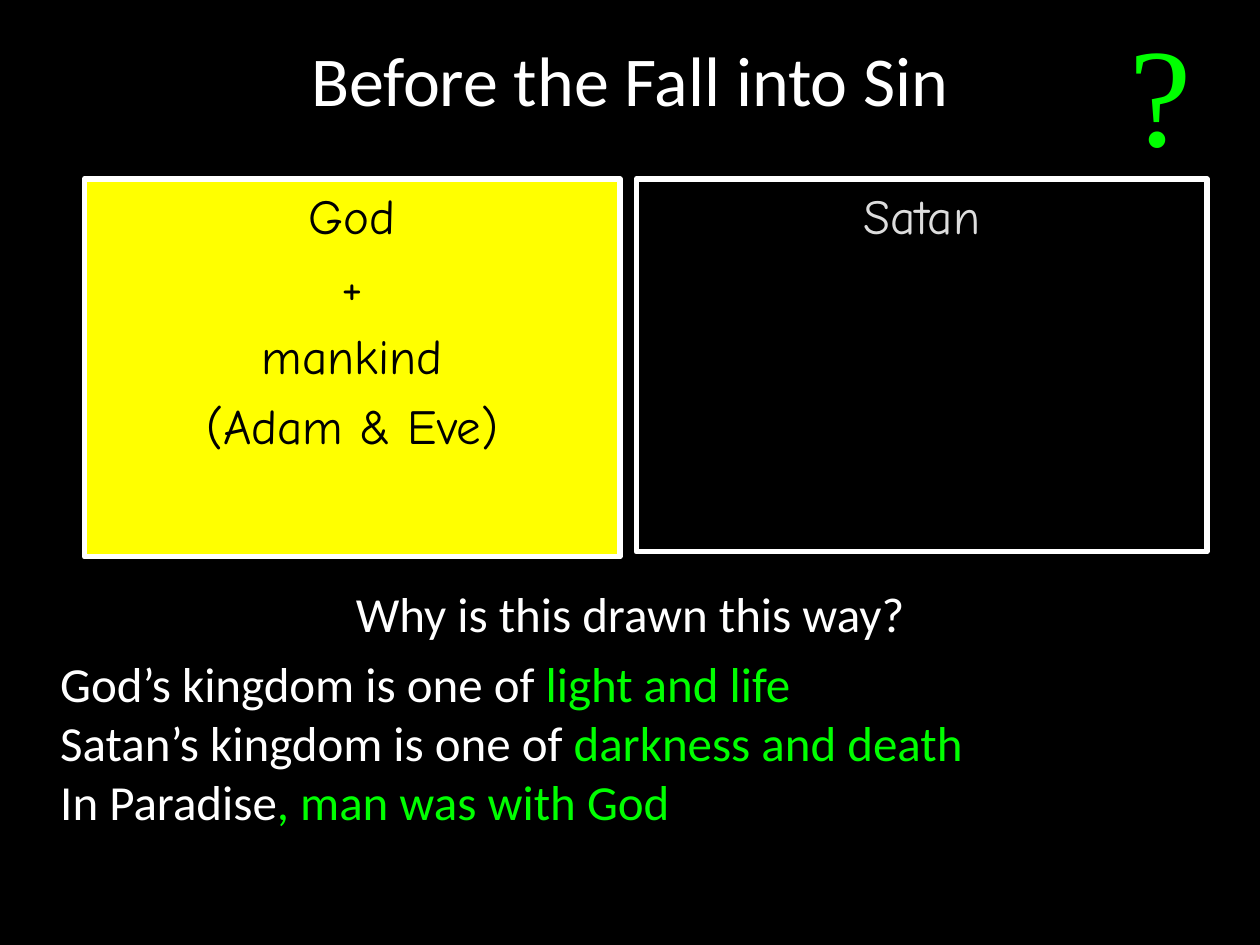
from pptx import Presentation
from pptx.dml.color import RGBColor
from pptx.enum.shapes import MSO_SHAPE
from pptx.enum.text import MSO_ANCHOR as Anchor, PP_ALIGN as Align
from pptx.util import Inches, Pt

COLORS = {
    "black": "000000",
    "white": "FFFFFF",
    "yellow": "FFFF00",
    "green": "00FF00",
    "gray": "DDDDDD",
}
TITLE = {"name": "Calibri", "size": Pt(40)}
BODY = {"name": "Calibri", "size": Pt(28)}
KINGDOM = {"name": "Comic Neue", "size": Pt(28)}
MARK = {"name": "Times New Roman", "size": Pt(80)}
SPACE_BEFORE = Pt(6.5)
ANSWERS = [
    ("God’s kingdom is one of ", "light and life"),
    ("Satan’s kingdom is one of ", "darkness and death"),
    ("In Paradise", ", man was with God"),
]


def color(name):
    """Return the named colour."""
    return RGBColor.from_string(COLORS[name])


def place(shape, box):
    """Set left, top, width and height in inches."""
    for key, value in zip(("left", "top", "width", "height"), box):
        setattr(shape, key, Inches(value))


def add_run(paragraph, text, font, color_name):
    """Append formatted text to a paragraph."""
    run = paragraph.add_run()
    run.text = text
    for key, value in font.items():
        setattr(run.font, key, value)
    run.font.color.rgb = color(color_name)


def write_lines(frame, lines, font, color_name, space=SPACE_BEFORE):
    """Write each line as a centred paragraph."""
    frame.word_wrap = True
    for index, line in enumerate(lines):
        paragraph = frame.add_paragraph() if index else frame.paragraphs[0]
        paragraph.alignment = Align.CENTER
        paragraph.space_before = space
        add_run(paragraph, line, font, color_name)


def set_title(slide, text):
    """Move and fill the title placeholder."""
    title = slide.shapes.title
    place(title, (0, 0, 10, 1.25))
    title.text_frame.vertical_anchor = Anchor.MIDDLE
    write_lines(title.text_frame, [text], TITLE, "white", Pt(0))


def add_text(slide, box, lines, font, color_name, space=SPACE_BEFORE):
    """Add a text box of centred lines and return its frame."""
    frame = slide.shapes.add_textbox(*map(Inches, box)).text_frame
    write_lines(frame, lines, font, color_name, space)
    return frame


def add_kingdom(slide, box, fill, lines, color_name):
    """Add a white-framed rectangle holding the members of a kingdom."""
    shape = slide.shapes.add_shape(MSO_SHAPE.RECTANGLE, *map(Inches, box))
    shape.shadow.inherit = False
    shape.fill.solid()
    shape.fill.fore_color.rgb = color(fill)
    shape.line.color.rgb = color("white")
    shape.line.width = Pt(3)
    shape.text_frame.vertical_anchor = Anchor.TOP
    write_lines(shape.text_frame, lines, KINGDOM, color_name)


def add_answers(frame):
    """Add the indented answers with their key words in green."""
    paragraph = frame.add_paragraph()
    paragraph.alignment = Align.LEFT
    paragraph.space_before = SPACE_BEFORE
    paragraph._p.get_or_add_pPr().set("marL", str(Inches(0.38)))
    for index, (opening, answer) in enumerate(ANSWERS):
        if index:
            paragraph.add_line_break()
        add_run(paragraph, opening, BODY, "white")
        add_run(paragraph, answer, BODY, "green")


def main():
    """Build and save the slide."""
    presentation = Presentation()
    presentation.slide_width = Inches(10)
    presentation.slide_height = Inches(7.5)
    slide = presentation.slides.add_slide(presentation.slide_layouts[5])
    slide.background.fill.solid()
    slide.background.fill.fore_color.rgb = color("black")

    set_title(slide, "Before the Fall into Sin")
    question = ["Why is this drawn this way?"]
    add_answers(add_text(slide, (0, 4.58, 10, 2.92), question, BODY, "white"))
    members = ["God", "+", "mankind", "(Adam & Eve)"]
    add_kingdom(slide, (0.67, 1.42, 4.25, 3), "yellow", members, "black")
    add_kingdom(slide, (5.05, 1.42, 4.53, 2.96), "black", ["Satan"], "gray")
    mark = add_text(slide, (8.42, 0, 1.58, 1.43), ["?"], MARK, "green", Pt(0))
    mark.vertical_anchor = Anchor.MIDDLE

    presentation.save("out.pptx")


if __name__ == "__main__":
    main()
